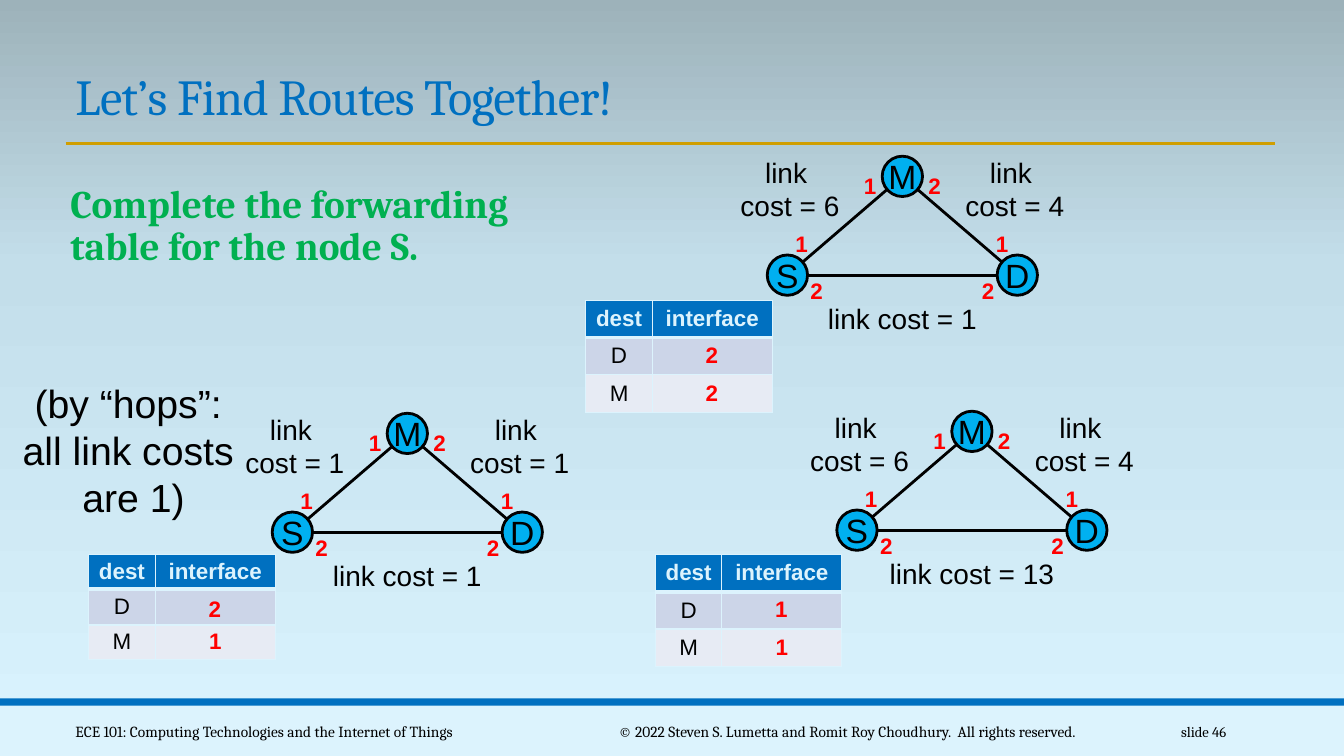
"""Build the slide on finding routes with three small network graphs and forwarding tables."""
from copy import deepcopy

from lxml.etree import SubElement
from pptx import Presentation
from pptx.dml.color import RGBColor
from pptx.enum.shapes import MSO_CONNECTOR, MSO_SHAPE
from pptx.enum.text import MSO_ANCHOR, PP_ALIGN
from pptx.oxml.ns import qn
from pptx.util import Inches, Pt

color = RGBColor.from_string
BLUE, PALE, RED, BLACK = "0070C0", "DCF3FD", "FF0000", "000000"


def write(frame, words, size, ink, font="Arial", bold=False, align=PP_ALIGN.CENTER):
    paragraph = frame.paragraphs[0]
    paragraph.alignment = align
    for index, line in enumerate(words.split("\n")):
        if index:
            paragraph.add_line_break()
        run = paragraph.add_run()
        run.text = line
        run.font.name, run.font.size, run.font.bold = font, Pt(size), bold
        run.font.color.rgb = color(ink)
    return paragraph


def add_label(left, top, width, height, words, size, ink, wrap=False,
              anchor=MSO_ANCHOR.TOP, **style):
    box = slide.shapes.add_textbox(Inches(left), Inches(top), Inches(width), Inches(height))
    frame = box.text_frame
    frame.word_wrap = wrap
    frame.vertical_anchor = anchor
    return frame, write(frame, words, size, ink, **style)


deck = Presentation()
deck.slide_width, deck.slide_height = Inches(13.33), Inches(7.5)
slide = deck.slides.add_slide(deck.slide_layouts[6])

sky = slide.background.fill
sky.gradient()
sky.gradient_angle = 90
stop_list = slide._element.find(".//" + qn("a:gsLst"))
stop_list.append(deepcopy(stop_list[-1]))
sky_stops = [(0, "DAF4FF"), (0.65, "C3DEEA"), (1, "9DB2BA")]
for stop, (position, tint) in zip(sky.gradient_stops, sky_stops):
    stop.position = position
    stop.color.rgb = color(tint)

for top, height, tint in [(7, 0.5, PALE), (6.93, 0.07, BLUE)]:
    band = slide.shapes.add_shape(
        MSO_SHAPE.RECTANGLE, 0, Inches(top), Inches(13.33), Inches(height))
    band.shadow.inherit = False
    band.fill.solid()
    band.fill.fore_color.rgb = color(tint)
    band.line.fill.background()

_, title = add_label(0.65, 0.59, 12.01, 0.71, "Let’s Find Routes Together!", 36, BLUE, wrap=True,
                     anchor=MSO_ANCHOR.BOTTOM, font="Cambria", align=PP_ALIGN.LEFT)
title.line_spacing = 0.85
title.runs[0].font._element.set("spc", "-50")

task_frame, task = add_label(
    0.6, 1.78, 8.52, 4.64, "Complete the forwarding \ntable for the node S.", 28, "00B050",
    wrap=True, font="Cambria", bold=True, align=PP_ALIGN.LEFT)
task_frame.margin_left, task_frame.margin_right = Inches(0.1), 0
task.line_spacing = 0.9
task.space_after = Pt(2)

footers = [
    (10.83, 1.43, "slide 46", 10.5, PP_ALIGN.RIGHT),
    (0.65, 4.58, "ECE 101: Computing Technologies and the Internet of Things", 11, PP_ALIGN.LEFT),
    (5.46, 5.89, "© 2022 Steven S. Lumetta and Romit Roy Choudhury.  All rights reserved.",
     11, PP_ALIGN.CENTER),
]
for left, width, words, size, align in footers:
    add_label(left, 7.06, width, 0.4, words, size, BLACK, wrap=True,
              anchor=MSO_ANCHOR.MIDDLE, font="Cambria", align=align)

add_label(0.11, 3.71, 2.43, 1.51, "(by “hops”: \nall link costs \nare 1)", 28, BLACK)

NODES = {"S": (0, 0), "D": (2.28, 0), "M": (1.14, -0.98)}
INTERFACES = [("1", -0.02, -0.5), ("1", 1.97, -0.5), ("1", 0.66, -1.07),
              ("2", 1.3, -1.07), ("2", 0.13, -0.03), ("2", 1.83, -0.03)]
networks = [
    (2.9, 5.28, 1, 1, 1),
    (8.5, 5.26, 6, 4, 13),
    (7.81, 2.73, 6, 4, 1),
]
links = [(0.65, 1.42, 12.65, 1.42, "D09E00")]
for x, y, *_ in networks:
    for start, end in ["SM", "DM", "DS"]:
        (x1, y1), (x2, y2) = NODES[start], NODES[end]
        links.append((x + x1, y + y1, x + x2, y + y2, BLACK))
for x1, y1, x2, y2, ink in links:
    link = slide.shapes.add_connector(
        MSO_CONNECTOR.STRAIGHT, Inches(x1), Inches(y1), Inches(x2), Inches(y2))
    link.line.color.rgb = color(ink)
    link.line.width = Pt(2)
    SubElement(link._element.spPr, qn("a:effectLst"))

for x, y, cost_sm, cost_md, cost_sd in networks:
    for name, (dx, dy) in NODES.items():
        node = slide.shapes.add_shape(MSO_SHAPE.OVAL, Inches(x + dx - 0.2), Inches(y + dy - 0.2),
                                      Inches(0.4), Inches(0.4))
        node.shadow.inherit = False
        node.fill.solid()
        node.fill.fore_color.rgb = color("00B0F0")
        node.line.color.rgb = color(BLACK)
        node.line.width = Pt(2)
        frame = node.text_frame
        frame.margin_left = frame.margin_right = frame.margin_top = frame.margin_bottom = 0
        frame.vertical_anchor = MSO_ANCHOR.MIDDLE
        frame.word_wrap = False
        write(frame, name, 24, BLACK)
    add_label(x + 0.22, y + 0.21, 1.84, 0.44, f"link cost = {cost_sd}", 20, BLACK)
    for dx, cost in [(-0.57, cost_sm), (1.66, cost_md)]:
        add_label(x + dx, y - 1.24, 1.19, 0.77, f"link \ncost = {cost}", 20, BLACK)
    for number, dx, dy in INTERFACES:
        add_label(x + dx, y + dy, 0.33, 0.37, number, 16, RED, bold=True, align=PP_ALIGN.LEFT)

ROW_FILLS = [BLUE, "CCD5E8", "E7EBF4"]
forwarding_tables = [
    (0.88, 5.5, 0.34, "1"),
    (6.5, 5.5, 0.37, "1"),
    (5.81, 2.98, 0.37, ""),
]
for left, top, row_height, to_m in forwarding_tables:
    table = slide.shapes.add_table(3, 2, Inches(left), Inches(top), Inches(1.85),
                                   Inches(3 * row_height)).table
    table.columns[0].width, table.columns[1].width = Inches(0.66), Inches(1.19)
    entries = [("dest", "interface"), ("D", ""), ("M", to_m)]
    for r, entry in enumerate(entries):
        table.rows[r].height = Inches(row_height)
        for c, words in enumerate(entry):
            cell = table.cell(r, c)
            cell.margin_top = cell.margin_bottom = Inches(0.03)
            cell.vertical_anchor = MSO_ANCHOR.MIDDLE
            ink = PALE if r == 0 else RED if c else BLACK
            if words:
                write(cell.text_frame, words, 16, ink, bold=ink != BLACK)
            for side in "LRTB":
                thick = (r, side) in [(0, "B"), (1, "T")]
                border = SubElement(cell._tc.get_or_add_tcPr(), qn(f"a:ln{side}"))
                border.set("w", str(Pt(3 if thick else 1)))
                border_fill = SubElement(border, qn("a:solidFill"))
                SubElement(border_fill, qn("a:srgbClr")).set("val", PALE)
            cell.fill.solid()
            cell.fill.fore_color.rgb = color(ROW_FILLS[r])

answers = [(1.97, 5.86, "2"), (7.59, 5.86, "1"), (6.9, 3.34, "2"), (6.9, 3.71, "2")]
for left, top, interface in answers:
    add_label(left, top, 0.33, 0.37, interface, 16, RED, bold=True, align=PP_ALIGN.LEFT)

deck.save("out.pptx")
